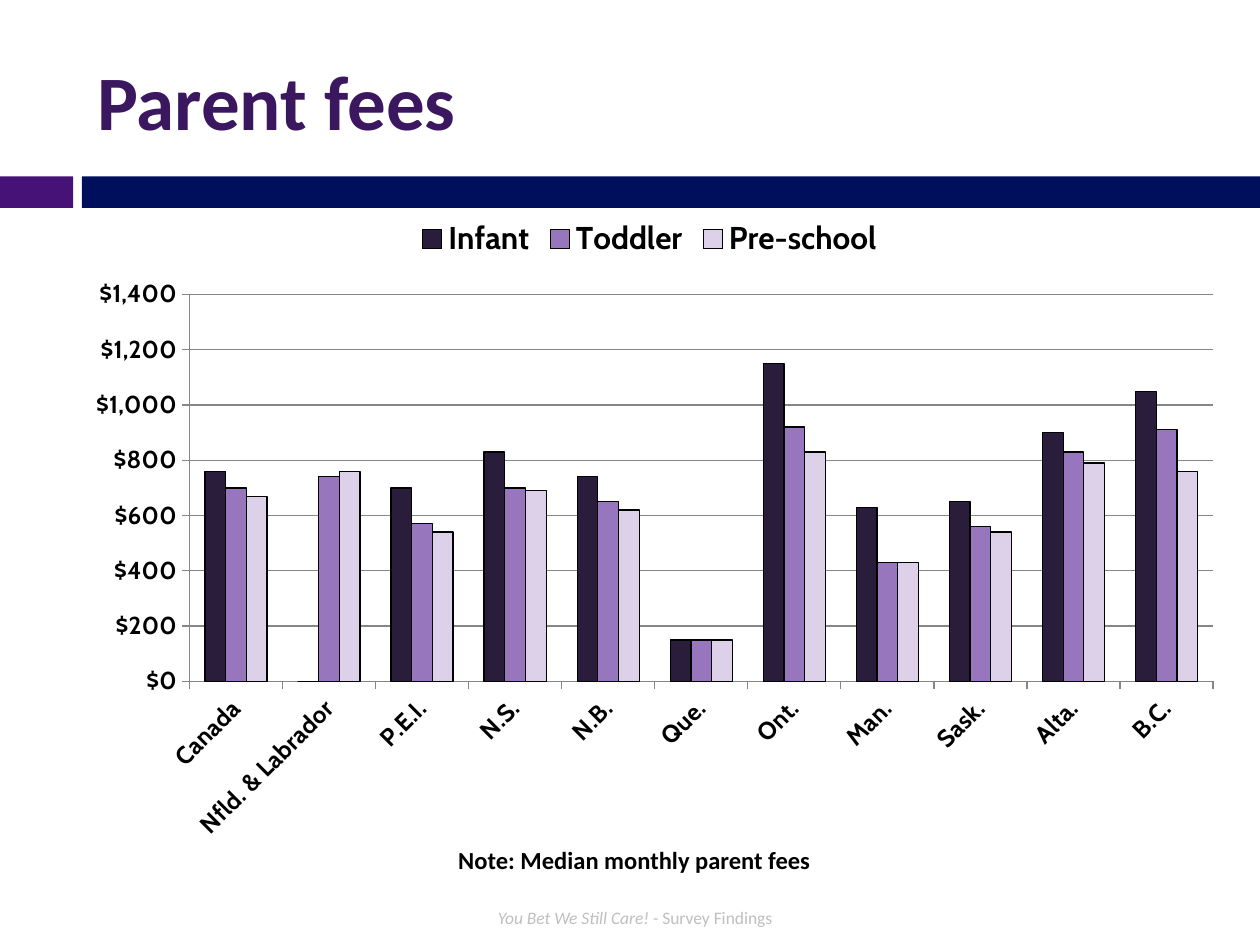
from lxml import etree
from pptx import Presentation
from pptx.chart.data import CategoryChartData
from pptx.dml.color import RGBColor
from pptx.enum.chart import XL_CHART_TYPE, XL_LEGEND_POSITION, XL_TICK_MARK
from pptx.enum.shapes import MSO_SHAPE
from pptx.enum.text import MSO_ANCHOR, PP_ALIGN
from pptx.oxml import parse_xml
from pptx.oxml.ns import nsdecls
from pptx.util import Inches, Pt

BLACK = RGBColor(0, 0, 0)
TITLE_PURPLE = RGBColor(0x3B, 0x17, 0x5F)
BAND_PURPLE = RGBColor(0x46, 0x12, 0x77)
BAND_NAVY = RGBColor(0x00, 0x0F, 0x5C)
FOOTER_GREY = RGBColor(0xBF, 0xBF, 0xBF)
GRID_GREY = RGBColor(0x86, 0x86, 0x86)

WIDTH, HEIGHT = 10, 7.5
BAND_TOP, BAND_HEIGHT = 1.4, 0.25
BANDS = [(0, 0.58, BAND_PURPLE), (0.65, WIDTH, BAND_NAVY)]  # left, right, fill

TITLE = "Parent fees"
NOTE = "Note: Median monthly parent fees"
FOOTER = [("You Bet We Still Care! ", True), ("- Survey Findings", False)]

PROVINCES = ["Canada", "Nfld. & Labrador", "P.E.I.", "N.S.", "N.B.", "Que.",
             "Ont.", "Man.", "Sask.", "Alta.", "B.C."]
FEES = [
    ("Infant", RGBColor(0x2A, 0x1C, 0x3B),
     [760, 0, 700, 830, 740, 150, 1150, 630, 650, 900, 1050]),
    ("Toddler", RGBColor(0x98, 0x76, 0xBE),
     [700, 740, 570, 700, 650, 150, 920, 430, 560, 830, 910]),
    ("Pre-school", RGBColor(0xDD, 0xD1, 0xE9),
     [670, 760, 540, 690, 620, 150, 830, 430, 540, 790, 760]),
]
PLOT_SHARES = {"x": 0.1, "y": 0.14, "w": 0.89, "h": 0.6}


def box(left, top, width, height):
    return [Inches(length) for length in (left, top, width, height)]


def write(frame, runs, size, color, bold=False, align=PP_ALIGN.CENTER,
          anchor=MSO_ANCHOR.MIDDLE):
    """Fill a text frame with one paragraph of (text, italic) runs."""
    frame.word_wrap = True
    frame.vertical_anchor = anchor
    paragraph = frame.paragraphs[0]
    paragraph.alignment = align
    for text, italic in runs:
        run = paragraph.add_run()
        run.text = text
        font = run.font
        font.name, font.size = "Calibri", Pt(size)
        font.bold, font.italic = bold, italic
        font.color.rgb = color


def add_bands(slide):
    for left, right, fill in BANDS:
        band = slide.shapes.add_shape(
            MSO_SHAPE.RECTANGLE, *box(left, BAND_TOP, right - left, BAND_HEIGHT))
        band.shadow.inherit = False
        band.fill.solid()
        band.fill.fore_color.rgb = fill
        band.line.fill.background()


def place_plot(chart):
    """Fix the inner plot area at shares of the chart's size."""
    plot_area = chart._chartSpace.chart.plotArea
    for old in plot_area.findall("{*}layout"):
        plot_area.remove(old)
    layout = parse_xml(f"<c:layout {nsdecls('c')}><c:manualLayout>"
                       '<c:layoutTarget val="inner"/><c:xMode val="edge"/>'
                       '<c:yMode val="edge"/></c:manualLayout></c:layout>')
    for name, share in PLOT_SHARES.items():
        tag = layout[0][0].tag.replace("layoutTarget", name)
        etree.SubElement(layout[0], tag, val=str(share))
    plot_area.insert(0, layout)


def add_fee_chart(slide):
    data = CategoryChartData()
    data.categories = PROVINCES
    for name, _, values in FEES:
        data.add_series(name, values)
    chart = slide.shapes.add_chart(
        XL_CHART_TYPE.COLUMN_CLUSTERED, *box(0.59, 1.62, 9.13, 5.12), data).chart
    chart.has_title = False
    chart.font.name, chart.font.size = "Cabin", Pt(10)
    chart.font.bold = True
    chart.font.color.rgb = BLACK

    chart.has_legend = True
    chart.legend.position = XL_LEGEND_POSITION.TOP
    chart.legend.include_in_layout = False
    chart.legend.font.size = Pt(18)

    plot = chart.plots[0]
    plot.gap_width, plot.overlap = 150, 0
    plot.vary_by_categories = False
    for series, (_, color, _) in zip(plot.series, FEES):
        series.format.fill.solid()
        series.format.fill.fore_color.rgb = color
        series.format.line.color.rgb = BLACK
        series.format.line.width = Pt(0.75)

    fees, provinces = chart.value_axis, chart.category_axis
    for axis in (fees, provinces):
        axis.major_tick_mark = XL_TICK_MARK.OUTSIDE
        axis.tick_labels.font.size = Pt(14)
        axis.format.line.color.rgb = GRID_GREY
    fees.minimum_scale, fees.maximum_scale, fees.major_unit = 0, 1400, 200
    fees.tick_labels.number_format = '"$"#,##0'
    fees.tick_labels.number_format_is_linked = False
    fees.has_major_gridlines = True
    fees.major_gridlines.format.line.color.rgb = GRID_GREY
    provinces._element.txPr.bodyPr.set("rot", str(-45 * 60000))
    place_plot(chart)


def main():
    deck = Presentation()
    deck.slide_width, deck.slide_height = Inches(WIDTH), Inches(HEIGHT)
    slide = deck.slides.add_slide(deck.slide_layouts[5])

    title = slide.shapes.title
    title.left, title.top, title.width, title.height = box(0.67, 0.37, 8.92, 0.84)
    write(title.text_frame, [(TITLE, False)], 44, TITLE_PURPLE, bold=True,
          align=PP_ALIGN.LEFT)

    add_bands(slide)
    add_fee_chart(slide)
    note = slide.shapes.add_textbox(*box(3.5, 6.66, 3.07, 0.34))
    write(note.text_frame, [(NOTE, False)], 14, BLACK, bold=True,
          anchor=MSO_ANCHOR.TOP)
    footer = slide.shapes.add_textbox(*box(3.5, 7.14, 3.08, 0.29))
    write(footer.text_frame, FOOTER, 10, FOOTER_GREY)
    deck.save("out.pptx")


if __name__ == "__main__":
    main()
